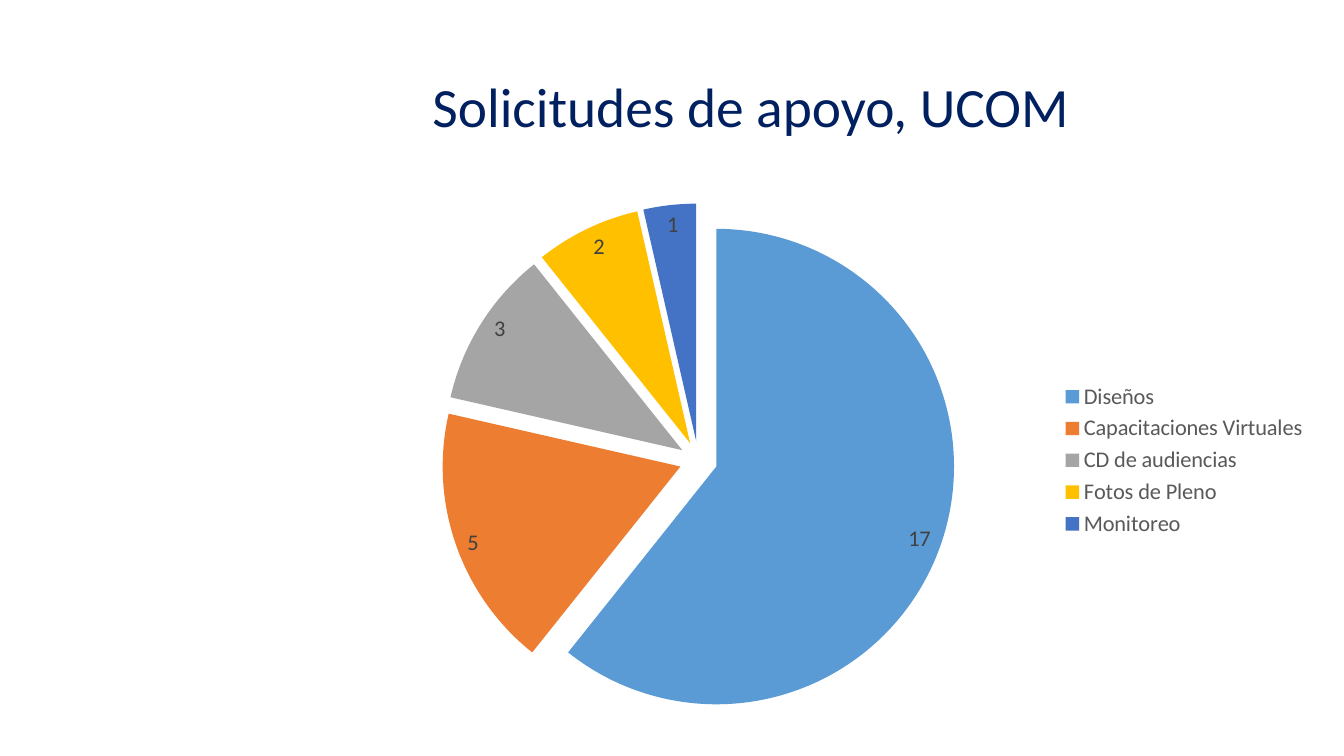
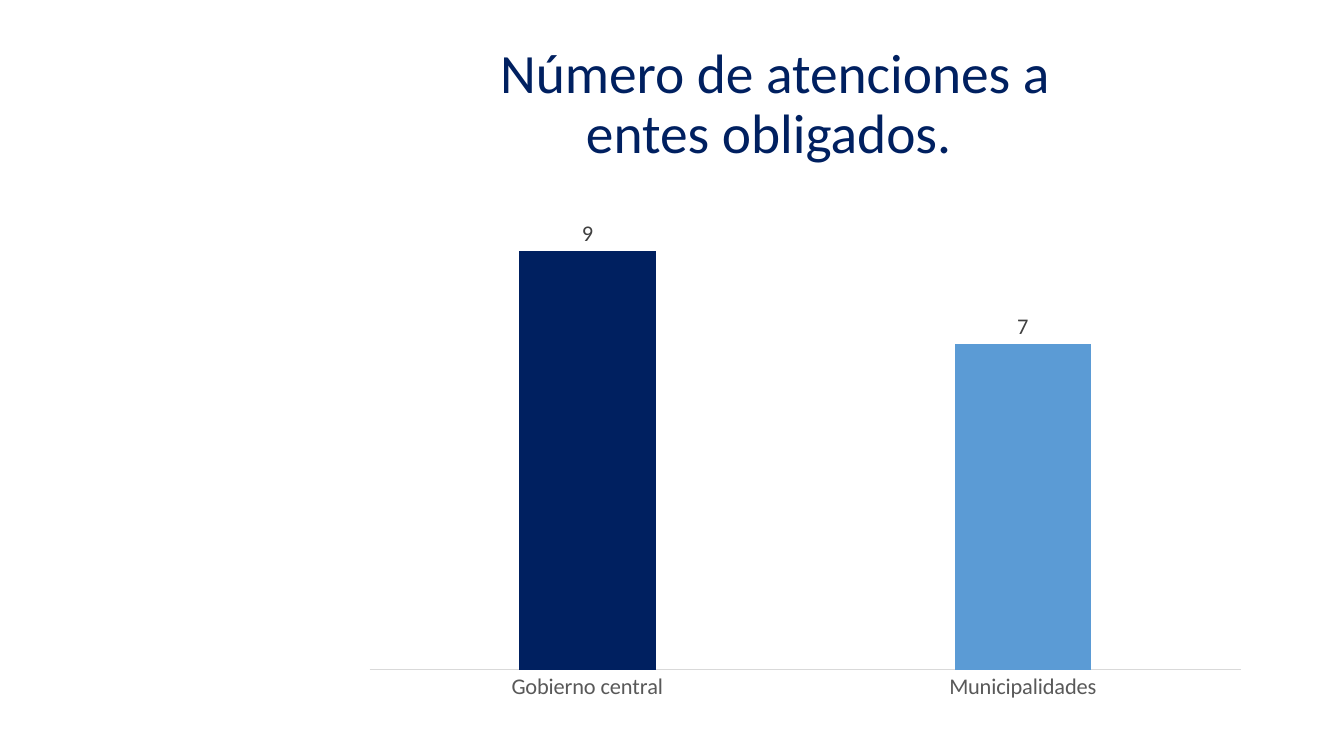
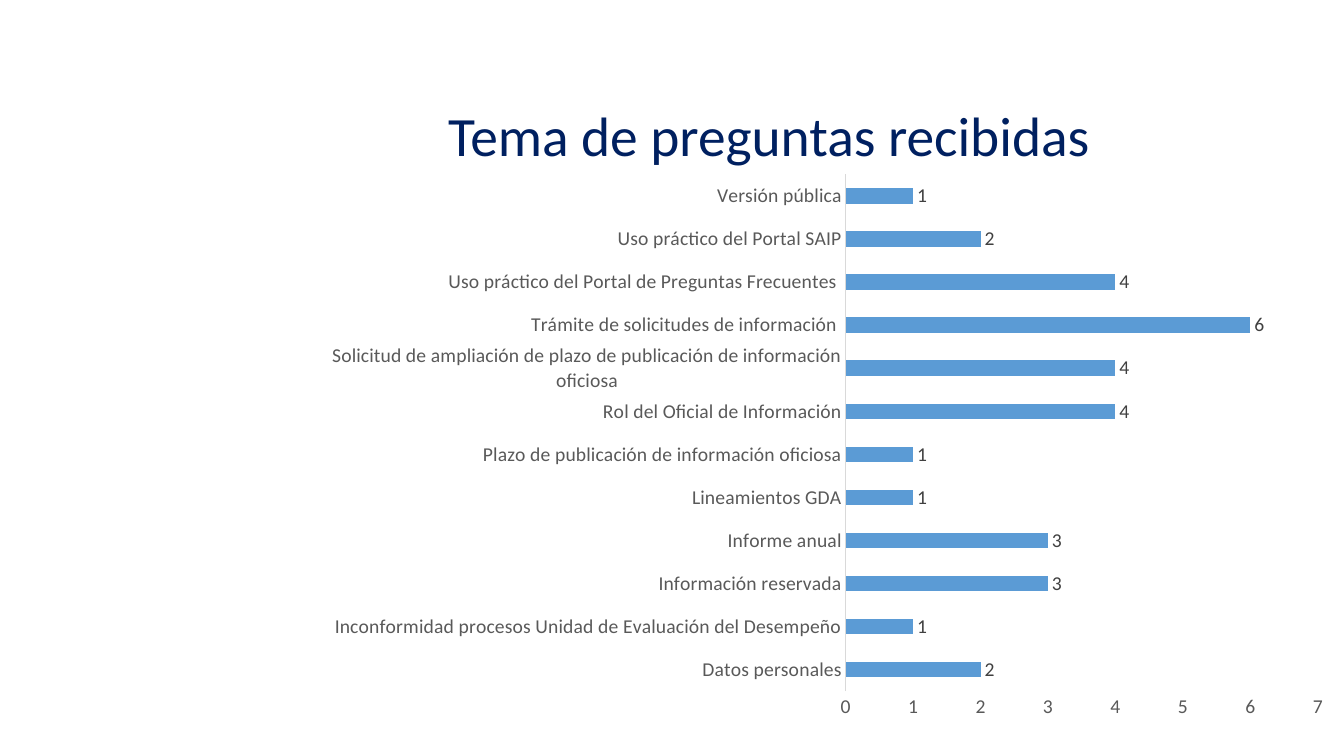
from lxml.etree import SubElement
from pptx import Presentation
from pptx.chart.data import CategoryChartData
from pptx.dml.color import RGBColor
from pptx.enum.chart import XL_CHART_TYPE as ChartType, XL_LEGEND_POSITION as LegendPos
from pptx.enum.chart import XL_LABEL_POSITION as LabelPos, XL_TICK_MARK as Tick
from pptx.enum.text import MSO_ANCHOR, PP_ALIGN
from pptx.oxml import parse_xml
from pptx.oxml.ns import nsdecls, qn
from pptx.util import Cm, Pt

# Theme: colours and type sizes shared by all slides
THEME = {
    "font": "Calibri",
    "navy": "002060", "blue": "5B9BD5", "orange": "ED7D31",
    "grey": "A5A5A5", "gold": "FFC000", "royal": "4472C4",
    "axis_text": "595959", "label_text": "404040", "axis_line": "D9D9D9",
    "title_size": 39.6, "chart_size": 16, "dense_size": 14,
}
TITLE_WIDTH, TITLE_HEIGHT = Cm(17.12), Cm(3.12)


def color(name):
    return RGBColor.from_string(THEME[name])


def style_font(font, size, color_name):
    for attribute, value in {"name": THEME["font"], "size": Pt(size)}.items():
        setattr(font, attribute, value)
    font.color.rgb = color(color_name)


# Content: one entry per slide, places in centimetres
topics = [
    ("Datos personales", 2),
    ("Inconformidad procesos Unidad de Evaluación del Desempeño", 1),
    ("Información reservada", 3),
    ("Informe anual", 3),
    ("Lineamientos GDA", 1),
    ("Plazo de publicación de información oficiosa", 1),
    ("Rol del Oficial de Información", 4),
    ("Solicitud de ampliación de plazo de publicación de información oficiosa", 4),
    ("Trámite de solicitudes de información ", 6),
    ("Uso práctico del Portal de Preguntas Frecuentes ", 4),
    ("Uso práctico del Portal SAIP", 2),
    ("Versión pública", 1),
]
requests = [("Diseños", 17), ("Capacitaciones Virtuales", 5), ("CD de audiencias", 3),
            ("Fotos de Pleno", 2), ("Monitoreo", 1)]
attentions = [("Gobierno central", 9), ("Municipalidades", 7)]

pages = [
    {"title": "Solicitudes de apoyo, UCOM", "title_at": (10.36, 1.19),
     "kind": ChartType.PIE, "area": (8.53, 4.78, 24.69, 13.64),
     "data": requests, "size": THEME["chart_size"], "label_pos": LabelPos.BEST_FIT,
     "points": ["blue", "orange", "grey", "gold", "royal"], "plot": {}},
    {"title": "Número de atenciones a entes obligados. ", "title_at": (10.97, 1.09),
     "kind": ChartType.COLUMN_CLUSTERED, "area": (8.86, 4.9, 22.86, 13.03),
     "data": attentions, "size": THEME["chart_size"], "label_pos": LabelPos.OUTSIDE_END,
     "points": ["navy"], "plot": {"gap_width": 219, "overlap": -27},
     "scale": {"maximum_scale": 10, "visible": False}},
    {"title": "Tema de preguntas recibidas", "title_at": (10.82, 1.93),
     "kind": ChartType.BAR_CLUSTERED, "area": (7.85, 4.11, 26.01, 14.3),
     "data": topics, "size": THEME["dense_size"], "label_pos": LabelPos.OUTSIDE_END,
     "points": [], "plot": {"gap_width": 182},
     "scale": {"maximum_scale": 7, "major_unit": 1}},
]

deck = Presentation()
deck.slide_width, deck.slide_height = Cm(33.87), Cm(19.05)

for page in pages:
    slide = deck.slides.add_slide(deck.slide_layouts[6])
    is_pie = page["kind"] == ChartType.PIE

    # Title
    left, top = map(Cm, page["title_at"])
    heading = slide.shapes.add_textbox(left, top, TITLE_WIDTH, TITLE_HEIGHT).text_frame
    heading.word_wrap = True
    heading.vertical_anchor = MSO_ANCHOR.MIDDLE
    line = heading.paragraphs[0]
    line.alignment, line.line_spacing = PP_ALIGN.CENTER, 0.9
    run = line.add_run()
    run.text = page["title"]
    style_font(run.font, THEME["title_size"], "navy")

    # Chart on a clear background
    names, values = zip(*page["data"])
    figures = CategoryChartData(number_format="General")
    figures.categories = names
    figures.add_series("Series 1", values)
    chart = slide.shapes.add_chart(page["kind"], *map(Cm, page["area"]), figures).chart
    chart.has_title = False
    chart.has_legend = is_pie
    style_font(chart.font, page["size"], "axis_text")
    chart.element.find(qn("c:chart")).addnext(
        parse_xml(f"<c:spPr {nsdecls('c', 'a')}><a:noFill/><a:ln><a:noFill/></a:ln></c:spPr>"))

    # Series, points and value labels
    plot = chart.plots[0]
    plot.vary_by_categories = is_pie
    plot.has_data_labels = True
    for attribute, value in page["plot"].items():
        setattr(plot, attribute, value)
    for attribute, value in {"show_value": True, "show_percentage": False,
                             "position": page["label_pos"]}.items():
        setattr(plot.data_labels, attribute, value)
    style_font(plot.data_labels.font, page["size"], "label_text")
    series = plot.series[0]
    series.format.fill.solid()
    series.format.fill.fore_color.rgb = color("blue")
    for index, name in enumerate(page["points"]):
        fill = series.points[index].format.fill
        fill.solid()
        fill.fore_color.rgb = color(name)

    # Pie: separated slices and legend
    if is_pie:
        series_xml = next(chart.element.iter(qn("c:ser")))
        explosion = SubElement(series_xml, qn("c:explosion"), val="8")
        series_xml.find(qn("c:spPr")).addnext(explosion)
        chart.legend.position = LegendPos.RIGHT
        chart.legend.include_in_layout = False
        style_font(chart.legend.font, page["size"], "axis_text")
        continue

    # Bars: axes
    for axis in (chart.category_axis, chart.value_axis):
        for attribute, value in {"major_tick_mark": Tick.NONE, "minor_tick_mark": Tick.NONE,
                                 "has_major_gridlines": False}.items():
            setattr(axis, attribute, value)
        style_font(axis.tick_labels.font, page["size"], "axis_text")
    chart.category_axis.format.line.color.rgb = color("axis_line")
    chart.category_axis.format.line.width = Pt(0.75)
    chart.value_axis.format.line.fill.background()
    for attribute, value in {"minimum_scale": 0, **page["scale"]}.items():
        setattr(chart.value_axis, attribute, value)

deck.save("out.pptx")
